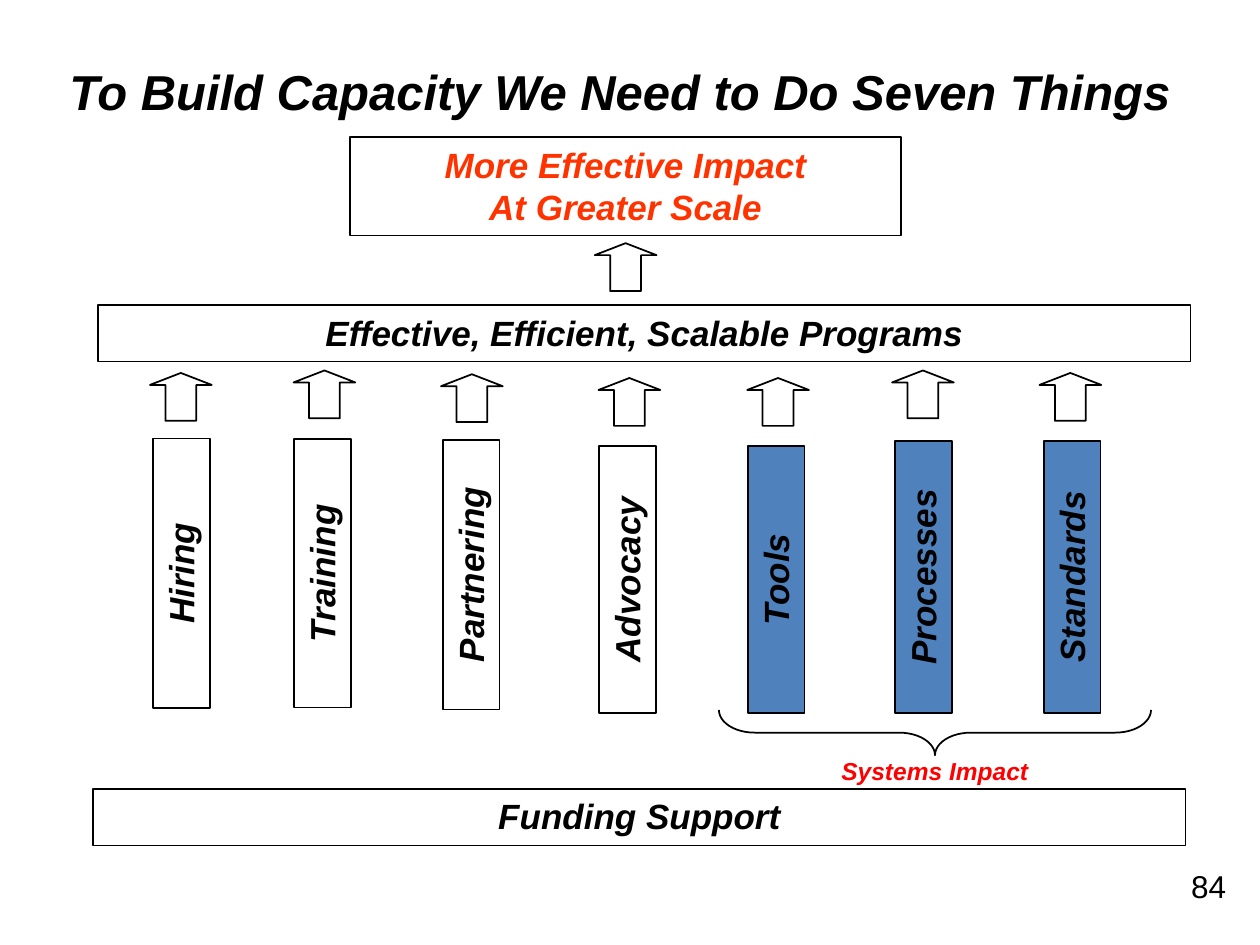
from pptx import Presentation
from pptx.dml.color import RGBColor
from pptx.enum.shapes import MSO_SHAPE
from pptx.enum.text import MSO_ANCHOR, PP_ALIGN
from pptx.util import Inches, Pt

RECT, UP_ARROW, BRACE = MSO_SHAPE.RECTANGLE, MSO_SHAPE.UP_ARROW, MSO_SHAPE.RIGHT_BRACE
CENTER, RIGHT = PP_ALIGN.CENTER, PP_ALIGN.RIGHT
TOP, MIDDLE = MSO_ANCHOR.TOP, MSO_ANCHOR.MIDDLE

THEME = {
    "font": "Arial",
    "black": RGBColor(0x00, 0x00, 0x00),
    "orange": RGBColor(0xFF, 0x33, 0x00),
    "red": RGBColor(0xFF, 0x00, 0x00),
    "blue": RGBColor(0x4F, 0x81, 0xBD),
    "title": Pt(28),
    "body": Pt(20),
    "number": Pt(18),
    "label": Pt(14),
    "line": Pt(1),
}

prs = Presentation()
prs.slide_width, prs.slide_height = Inches(10), Inches(7.5)
s = prs.slides.add_slide(prs.slide_layouts[6])


def add_outline(kind, left, top, width, height, fill=None, rotation=0):
    """Add a black-outlined shape, unfilled unless a theme colour is named."""
    sp = s.shapes.add_shape(kind, Inches(left), Inches(top), Inches(width), Inches(height))
    sp.shadow.inherit = False
    sp.rotation = rotation
    sp.line.color.rgb = THEME["black"]
    sp.line.width = THEME["line"]
    if fill:
        sp.fill.solid()
        sp.fill.fore_color.rgb = THEME[fill]
    else:
        sp.fill.background()
    return sp


def write(sp, lines, size="body", color="black", align=CENTER, anchor=TOP, bold=True):
    """Write one paragraph per line; bold text is also italic."""
    tf = sp.text_frame
    tf.word_wrap = True
    tf.vertical_anchor = anchor
    font = {"name": THEME["font"], "size": THEME[size], "bold": bold, "italic": bold}
    for i, line in enumerate(lines):
        p = tf.add_paragraph() if i else tf.paragraphs[0]
        p.alignment = align
        r = p.add_run()
        r.text = line
        for name, value in font.items():
            setattr(r.font, name, value)
        r.font.color.rgb = THEME[color]


# Title, systems label and slide number
texts = [
    ((0.42, 0.52, 9, 0.4), "To Build Capacity We Need to Do Seven Things",
     {"size": "title", "anchor": MIDDLE}),
    ((6.42, 5.95, 2, 0.33), "Systems Impact", {"size": "label", "color": "red"}),
    ((8.5, 6.83, 1.33, 0.52), "84", {"size": "number", "align": RIGHT, "bold": False}),
]
for box, text, style in texts:
    sp = s.shapes.add_textbox(*map(Inches, box))
    write(sp, [text], **style)

# Horizontal bars
bars = [
    ((2.78, 1.09, 4.37, 0.78), ["More Effective Impact", "At Greater Scale"], "orange"),
    ((0.78, 2.42, 8.67, 0.45), ["Effective, Efficient, Scalable Programs"], "black"),
    ((0.74, 6.26, 8.67, 0.45), ["Funding Support"], "black"),
]
for box, lines, color in bars:
    write(add_outline(RECT, *box), lines, color=color)

# Pillars: name, centre x, centre y, length, fill, arrow left, arrow top
BAR, ARROW_W, ARROW_H = 0.45, 0.49, 0.38
pillars = [
    ("Hiring", 1.44, 4.55, 2.14, None, 1.19, 2.96),
    ("Training", 2.56, 4.55, 2.13, None, 2.33, 2.94),
    ("Partnering", 3.74, 4.56, 2.14, None, 3.5, 2.97),
    ("Advocacy", 4.98, 4.6, 2.12, None, 4.75, 3),
    ("Tools", 6.16, 4.6, 2.12, "blue", 5.93, 3),
    ("Processes", 7.33, 4.58, 2.16, "blue", 7.08, 2.94),
    ("Standards", 8.51, 4.58, 2.16, "blue", 8.25, 2.96),
]
for name, x, y, length, fill, arrow_left, arrow_top in pillars:
    sp = add_outline(RECT, x - length / 2, y - BAR / 2, length, BAR, fill, rotation=270)
    write(sp, [name])
    add_outline(UP_ARROW, arrow_left, arrow_top, ARROW_W, ARROW_H).adjustments[1] = 0.25

# Arrow to the final impact, and the brace under the systems pillars
add_outline(UP_ARROW, 4.72, 1.93, ARROW_W, ARROW_H).adjustments[1] = 0.25
add_outline(BRACE, 7.24, 4.1, 0.36, 3.43, rotation=90).adjustments[0] = 0.79

prs.save("out.pptx")
